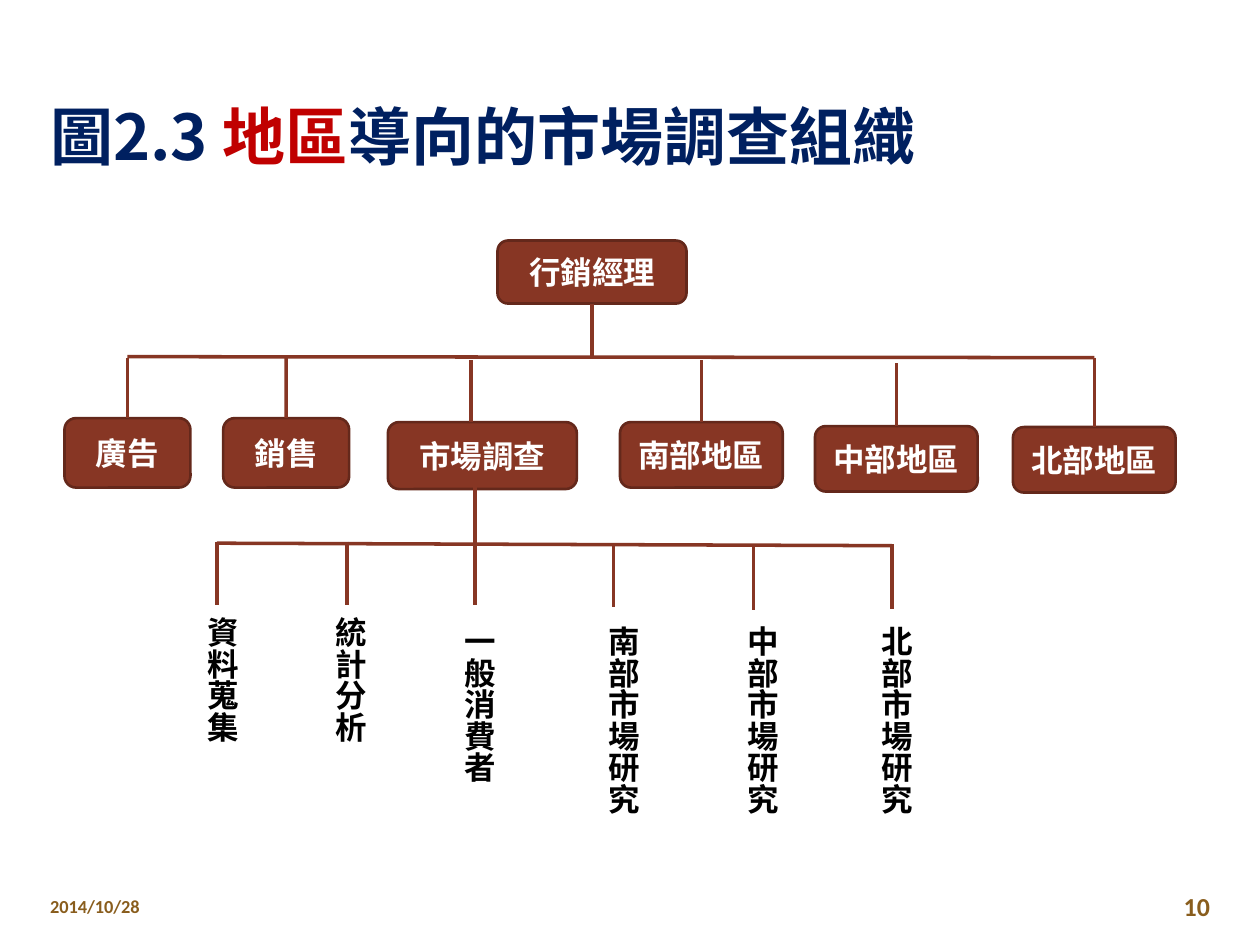
from lxml import etree
from pptx import Presentation
from pptx import util as u
from pptx.dml.color import RGBColor
from pptx.enum import shapes, text
from pptx.oxml.ns import qn

BROWN = RGBColor(0x87, 0x36, 0x24)
EDGE = RGBColor(0x64, 0x28, 0x1B)
NAVY = RGBColor(0x00, 0x20, 0x60)
RED = RGBColor(0xC0, 0x00, 0x00)
GOLD = RGBColor(0x89, 0x5D, 0x1D)
WHITE = RGBColor(0xFF, 0xFF, 0xFF)
BLACK = RGBColor(0x00, 0x00, 0x00)
CJK = "Noto Sans CJK SC"

MANAGER = ("行銷經理", 8.73, 0, 3.81, 1.27)
DEPARTMENTS = [
    ("廣告", 0, 3.58, 2.54, 1.4, 2.36),
    ("銷售", 3.2, 3.58, 2.54, 1.4, 2.34),
    ("市場調查", 6.52, 3.66, 3.81, 1.35, 2.41),
    ("南部地區", 11.2, 3.66, 3.28, 1.32, 2.41),
    ("中部地區", 15.13, 3.74, 3.28, 1.32, 2.47),
    ("北部地區", 19.12, 3.76, 3.28, 1.32, 2.36),
]
RESEARCH = "市場調查"
RESEARCH_DROP_X = 8.2
TEAMS = [
    ("資料蒐集", 0, 2.39, 0.66, 1.12, 2.39),
    ("統計分析", 2.59, 2.39, 3.28, 1.12, 2.39),
    ("一般消費者", 5.18, 2.57, 5.87, 0, 2.39),
    ("南部市場研究", 8.08, 2.57, 8.66, 1.17, 2.44),
    ("中部市場研究", 10.9, 2.57, 11.48, 1.2, 2.49),
    ("北部市場研究", 13.59, 2.57, 14.27, 1.17, 2.47),
]


def format_run(r, size, color, font=CJK):
    r.font.size = u.Pt(size)
    r.font.bold = True
    r.font.name = font
    r.font.color.rgb = color
    ea = etree.SubElement(r.font._element, qn("a:ea"))
    ea.set("typeface", font)


def add_line(s, x1, y1, x2, y2):
    cn = s.shapes.add_connector(shapes.MSO_CONNECTOR.STRAIGHT,
                                u.Cm(x1), u.Cm(y1), u.Cm(x2), u.Cm(y2))
    cn.line.color.rgb = BROWN
    cn.line.width = u.Pt(2)
    etree.SubElement(cn._element.spPr, qn("a:effectLst"))
    return cn


def add_box(s, label, left, top, width, height):
    sp = s.shapes.add_shape(shapes.MSO_SHAPE.ROUNDED_RECTANGLE,
                            u.Cm(left), u.Cm(top), u.Cm(width), u.Cm(height))
    sp.shadow.inherit = False
    sp.fill.solid()
    sp.fill.fore_color.rgb = BROWN
    sp.line.color.rgb = EDGE
    sp.line.width = u.Pt(1.5)
    tf = sp.text_frame
    tf.text = label
    tf.vertical_anchor = text.MSO_ANCHOR.MIDDLE
    p = tf.paragraphs[0]
    p.alignment = text.PP_ALIGN.CENTER
    format_run(p.runs[0], 18, WHITE)
    return sp


def add_vertical_label(s, label, left, top):
    sp = s.shapes.add_textbox(u.Cm(left), u.Cm(top),
                              u.Cm(1.27), u.Cm(0.64 * len(label) + 0.26))
    tf = sp.text_frame
    tf.text = label
    tf.word_wrap = False
    tf.auto_size = text.MSO_AUTO_SIZE.SHAPE_TO_FIT_TEXT
    tf._txBody.bodyPr.set("vert", "eaVert")
    format_run(tf.paragraphs[0].runs[0], 18, BLACK)


def add_title(s, left, top, width, height):
    sp = s.shapes.title
    sp.left, sp.top, sp.width, sp.height = map(u.Cm, (left, top, width, height))
    tf = sp.text_frame
    tf.vertical_anchor = text.MSO_ANCHOR.BOTTOM
    p = tf.paragraphs[0]
    p.alignment = text.PP_ALIGN.LEFT
    p.space_before = u.Pt(4)
    for part, color in (("圖2.3 ", NAVY), ("地區", RED), ("導向的市場調查組織", NAVY)):
        r = p.add_run()
        r.text = part
        format_run(r, 36, color)


def add_departments(s, left, top):
    label, x, y, w, h = MANAGER
    manager = add_box(s, label, left + x, top + y, w, h)
    middle = left + x + w / 2
    stem = add_line(s, middle, top + h, middle, top + 2.36)
    stem.begin_connect(manager, 2)
    centers = [left + x + w / 2 for _, x, _, w, _, _ in DEPARTMENTS]
    add_line(s, centers[0], top + 2.34, centers[-1], top + 2.36)
    for (label, x, y, w, h, start), center in zip(DEPARTMENTS, centers):
        sp = add_box(s, label, left + x, top + y, w, h)
        if label == RESEARCH:
            drop_x = left + RESEARCH_DROP_X
            add_line(s, drop_x, top + start, drop_x, top + y)
        else:
            drop = add_line(s, center, top + start, center, top + y)
            drop.end_connect(sp, 0)


def add_teams(s, left, top):
    add_line(s, left + TEAMS[0][3], top + 1.15, left + TEAMS[-1][3], top + 1.2)
    for label, x, y, drop_x, start, end in TEAMS:
        add_line(s, left + drop_x, top + start, left + drop_x, top + end)
        add_vertical_label(s, label, left + x, top + y)


def add_footer(s, left, top, width, height):
    items = (("2014/10/28", left, 5.92, 10.5, text.PP_ALIGN.LEFT),
             ("10", left + width - 2.44, 2.44, 14.8, text.PP_ALIGN.RIGHT))
    for label, x, w, size, align in items:
        sp = s.shapes.add_textbox(u.Cm(x), u.Cm(top), u.Cm(w), u.Cm(height))
        tf = sp.text_frame
        tf.text = label
        tf.word_wrap = True
        tf.vertical_anchor = text.MSO_ANCHOR.MIDDLE
        p = tf.paragraphs[0]
        p.alignment = align
        format_run(p.runs[0], size, GOLD, "Calibri")


def main():
    prs = Presentation()
    prs.slide_width, prs.slide_height = u.Cm(25.4), u.Cm(19.05)
    s = prs.slides.add_slide(prs.slide_layouts[5])
    add_title(s, 0.76, 0.64, 23.88, 2.97)
    add_departments(s, 1.3, 4.85)
    add_teams(s, 3.71, 9.8)
    add_footer(s, 0.76, 17.86, 23.88, 0.81)
    prs.save("out.pptx")


if __name__ == "__main__":
    main()
